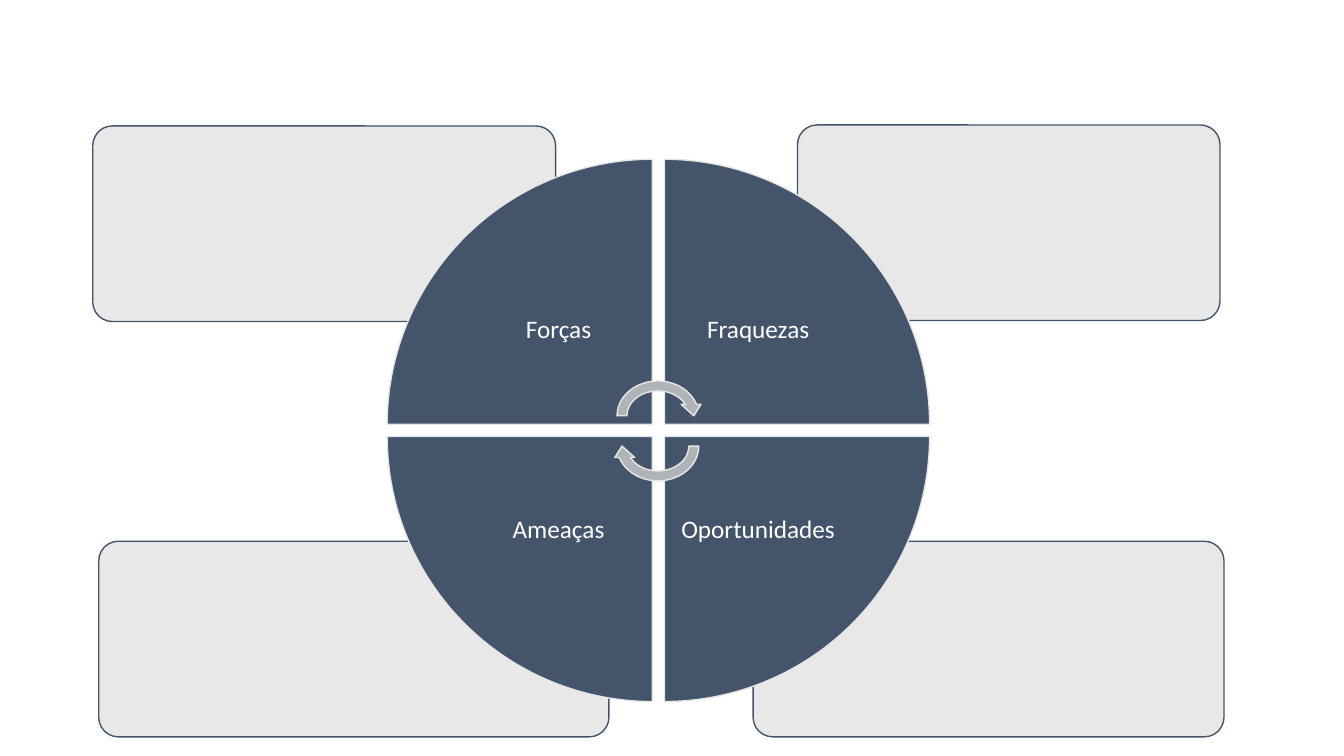
from lxml.etree import SubElement
from pptx import Presentation
from pptx.dml.color import RGBColor
from pptx.enum.shapes import MSO_SHAPE
from pptx.enum.text import MSO_ANCHOR, PP_ALIGN
from pptx.oxml.ns import qn
from pptx.util import Pt

EMU_PER_PX = 9144
NAVY, PALE, SILVER, WHITE = "44546A", "E7E6E6", "B0B4B9", "FFFFFF"


def px(length):
    return length * EMU_PER_PX


def colour(code):
    return RGBColor.from_string(code)


class SwotPage:
    """Draws styled elements of the SWOT diagram on one page."""

    font = "Calibri"
    size = 18
    inset = 14

    def __init__(self, deck):
        self.page = deck.slides.add_slide(deck.slide_layouts[6])

    def shape(self, kind, place, fill, line, rotation=0):
        shape = self.page.shapes.add_shape(kind, *map(px, place))
        shape.shadow.inherit = False
        shape.rotation = rotation
        shape.fill.solid()
        shape.fill.fore_color.rgb = colour(fill)
        shape.line.color.rgb = colour(line)
        shape.line.width = Pt(1)
        return shape

    def panel(self, place):
        panel = self.shape(MSO_SHAPE.ROUNDED_RECTANGLE, place, PALE, NAVY)
        panel.adjustments[0] = 0.1
        fill_colour = panel.fill._xPr.find(qn("a:solidFill"))[0]
        SubElement(fill_colour, qn("a:alpha"), val="90000")

    def wedge(self, place, rotation):
        self.shape(MSO_SHAPE.PIE_WEDGE, place, NAVY, PALE, rotation)

    def arrow(self, place, rotation):
        self.shape(MSO_SHAPE.CIRCULAR_ARROW, place, SILVER, PALE, rotation)

    def label(self, place, text):
        box = self.page.shapes.add_textbox(*map(px, place))
        frame = box.text_frame
        frame.word_wrap = True
        frame.vertical_anchor = MSO_ANCHOR.MIDDLE
        frame.margin_left = frame.margin_right = px(self.inset)
        frame.margin_top = frame.margin_bottom = px(self.inset)
        frame.text = text
        para = frame.paragraphs[0]
        para.alignment = PP_ALIGN.CENTER
        para.line_spacing = 0.9
        span = para.runs[0]
        span.font.name = self.font
        span.font.size = Pt(self.size)
        span.font.color.rgb = colour(WHITE)


def main():
    deck = Presentation()
    deck.slide_width, deck.slide_height = px(1333), px(750)
    swot = SwotPage(deck)

    panel_height = 194
    for left, top, width in [(747, 537, 467), (98, 537, 506), (791, 124, 419), (92, 125, 459)]:
        swot.panel((left, top, width, panel_height))

    wheel_left, wheel_top, wedge_size, gap, label_size = 384, 158, 263, 12, 186
    step = wedge_size + gap
    label_shift = wedge_size - label_size
    quadrants = [("Forças", 0, 0), ("Fraquezas", 1, 0), ("Oportunidades", 1, 1), ("Ameaças", 0, 1)]
    for turn, (text, column, row) in enumerate(quadrants):
        left, top = wheel_left + column * step, wheel_top + row * step
        swot.wedge((left, top, wedge_size, wedge_size), turn * 90)
        label_left = left + (1 - column) * label_shift
        label_top = top + (1 - row) * label_shift
        swot.label((label_left, label_top, label_size, label_size), text)

    for top, rotation in [(373, 0), (403, 180)]:
        swot.arrow((607, top, 91, 79), rotation)

    deck.save("out.pptx")


if __name__ == "__main__":
    main()
